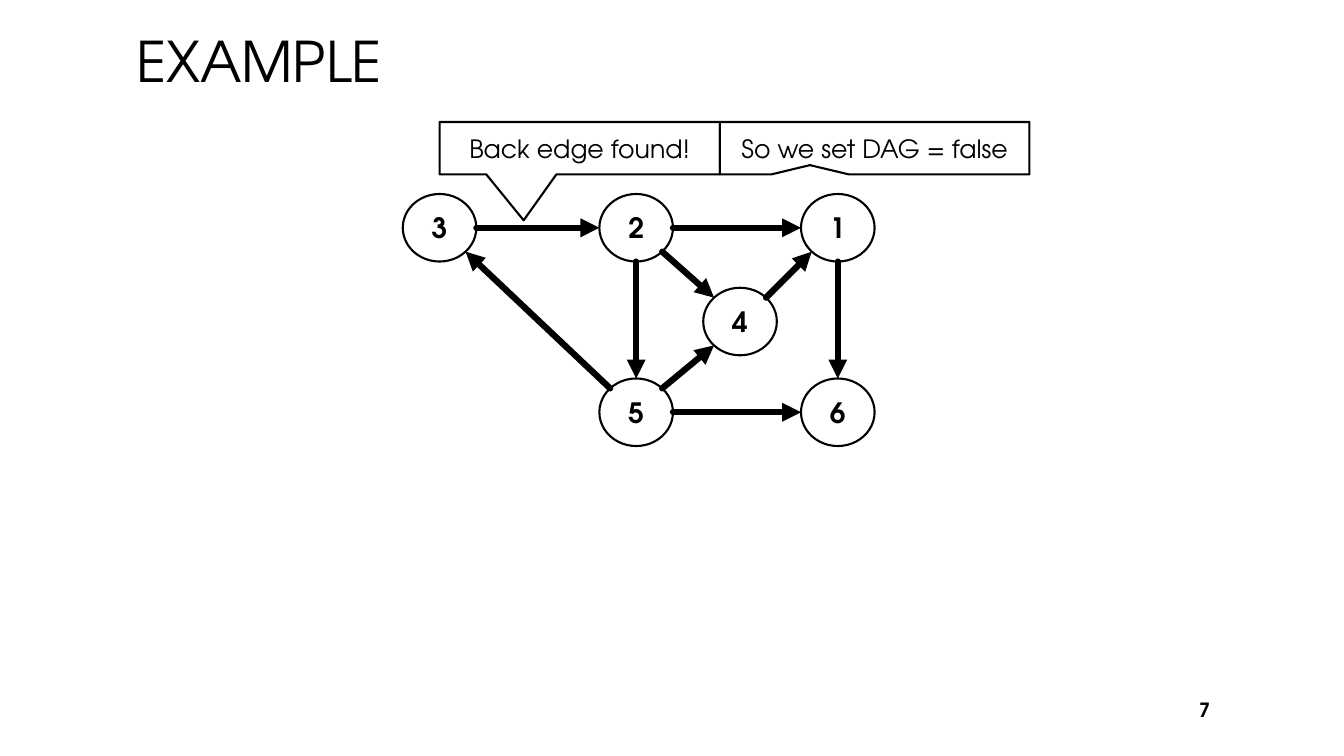
from dataclasses import dataclass
from math import copysign, sqrt

from lxml.etree import SubElement
from pptx import Presentation
from pptx.dml.color import RGBColor
from pptx.enum.shapes import MSO_CONNECTOR, MSO_SHAPE
from pptx.enum.text import MSO_ANCHOR, PP_ALIGN
from pptx.oxml.ns import qn
from pptx.shapes.autoshape import Shape
from pptx.slide import Slide
from pptx.util import Inches, Pt

BLACK = RGBColor(0x00, 0x00, 0x00)
WHITE = RGBColor(0xFF, 0xFF, 0xFF)
FONT = "TeX Gyre Adventor"
WIDE, HIGH = 0.73, 0.67


@dataclass(frozen=True)
class Node:
    label: str
    x: float
    y: float


@dataclass(frozen=True)
class Edge:
    start: Node
    end: Node


@dataclass(frozen=True)
class Callout:
    text: str
    left: float
    width: float
    tip: tuple[float, float]


ONE = Node("1", 8.31, 2.26)
TWO = Node("2", 6.31, 2.26)
THREE = Node("3", 4.36, 2.26)
FOUR = Node("4", 7.34, 3.19)
FIVE = Node("5", 6.31, 4.09)
SIX = Node("6", 8.31, 4.09)
NODES = [ONE, TWO, THREE, FOUR, FIVE, SIX]
EDGES = [
    Edge(THREE, TWO), Edge(TWO, ONE), Edge(TWO, FOUR), Edge(TWO, FIVE),
    Edge(FOUR, ONE), Edge(ONE, SIX), Edge(FIVE, THREE), Edge(FIVE, FOUR),
    Edge(FIVE, SIX),
]
CALLOUTS = [
    Callout("Back edge found!", 4.36, 2.78, (-0.2, 1.377)),
    Callout("So we set DAG = false", 7.14, 3.07, (-0.209, 0.324)),
]


def write(shape: Shape, text: str, size: int, align: PP_ALIGN, bold: bool = False) -> None:
    frame = shape.text_frame
    frame.word_wrap = True
    frame.vertical_anchor = MSO_ANCHOR.MIDDLE
    para = frame.paragraphs[0]
    para.alignment = align
    run = para.add_run()
    run.text = text
    run.font.name = FONT
    run.font.size = Pt(size)
    run.font.bold = bold
    run.font.color.rgb = BLACK


def add_block(slide: Slide, kind: MSO_SHAPE, left: float, top: float,
              width: float, height: float) -> Shape:
    shape = slide.shapes.add_shape(
        kind, Inches(left), Inches(top), Inches(width), Inches(height))
    shape.shadow.inherit = False
    shape.fill.solid()
    shape.fill.fore_color.rgb = WHITE
    shape.line.color.rgb = BLACK
    shape.line.width = Pt(1.5)
    return shape


def draw_node(slide: Slide, node: Node) -> None:
    shape = add_block(slide, MSO_SHAPE.OVAL, node.x - WIDE / 2,
                      node.y - HIGH / 2, WIDE, HIGH)
    write(shape, node.label, 20, PP_ALIGN.CENTER, True)


def draw_callout(slide: Slide, item: Callout) -> None:
    shape = add_block(slide, MSO_SHAPE.RECTANGULAR_CALLOUT,
                      item.left, 1.21, item.width, 0.52)
    for slot, value in enumerate(item.tip):
        shape.adjustments[slot] = value
    write(shape, item.text, 18, PP_ALIGN.CENTER)


def sign(value: float) -> float:
    return copysign(1, value) if value else 0


def rim(node: Node, other: Node) -> tuple[float, float]:
    across, down = sign(other.x - node.x), sign(other.y - node.y)
    reach = 2 * sqrt(abs(across) + abs(down))
    return node.x + across * WIDE / reach, node.y + down * HIGH / reach


def draw_edge(slide: Slide, edge: Edge) -> None:
    ends = rim(edge.start, edge.end) + rim(edge.end, edge.start)
    arrow = slide.shapes.add_connector(
        MSO_CONNECTOR.STRAIGHT, *(Inches(end) for end in ends))
    arrow.line.color.rgb = BLACK
    arrow.line.width = Pt(4.5)
    props = arrow.line._get_or_add_ln()
    props.set("cap", "rnd")
    SubElement(props, qn("a:tailEnd"), type="triangle")
    SubElement(arrow._element.spPr, qn("a:effectLst"))


def main() -> None:
    deck = Presentation()
    deck.slide_width, deck.slide_height = Inches(13.33), Inches(7.5)
    slide = deck.slides.add_slide(deck.slide_layouts[5])
    title = slide.shapes.title
    title.left, title.top = Inches(1.25), Inches(0.04)
    title.width, title.height = Inches(10.83), Inches(1.12)
    write(title, "EXAMPLE", 40, PP_ALIGN.LEFT)
    for node in NODES:
        draw_node(slide, node)
    for item in CALLOUTS:
        draw_callout(slide, item)
    for edge in EDGES:
        draw_edge(slide, edge)
    number = slide.shapes.add_textbox(
        Inches(11.5), Inches(6.84), Inches(0.6), Inches(0.4))
    write(number, "7", 14, PP_ALIGN.RIGHT, True)
    deck.save("out.pptx")


if __name__ == "__main__":
    main()
